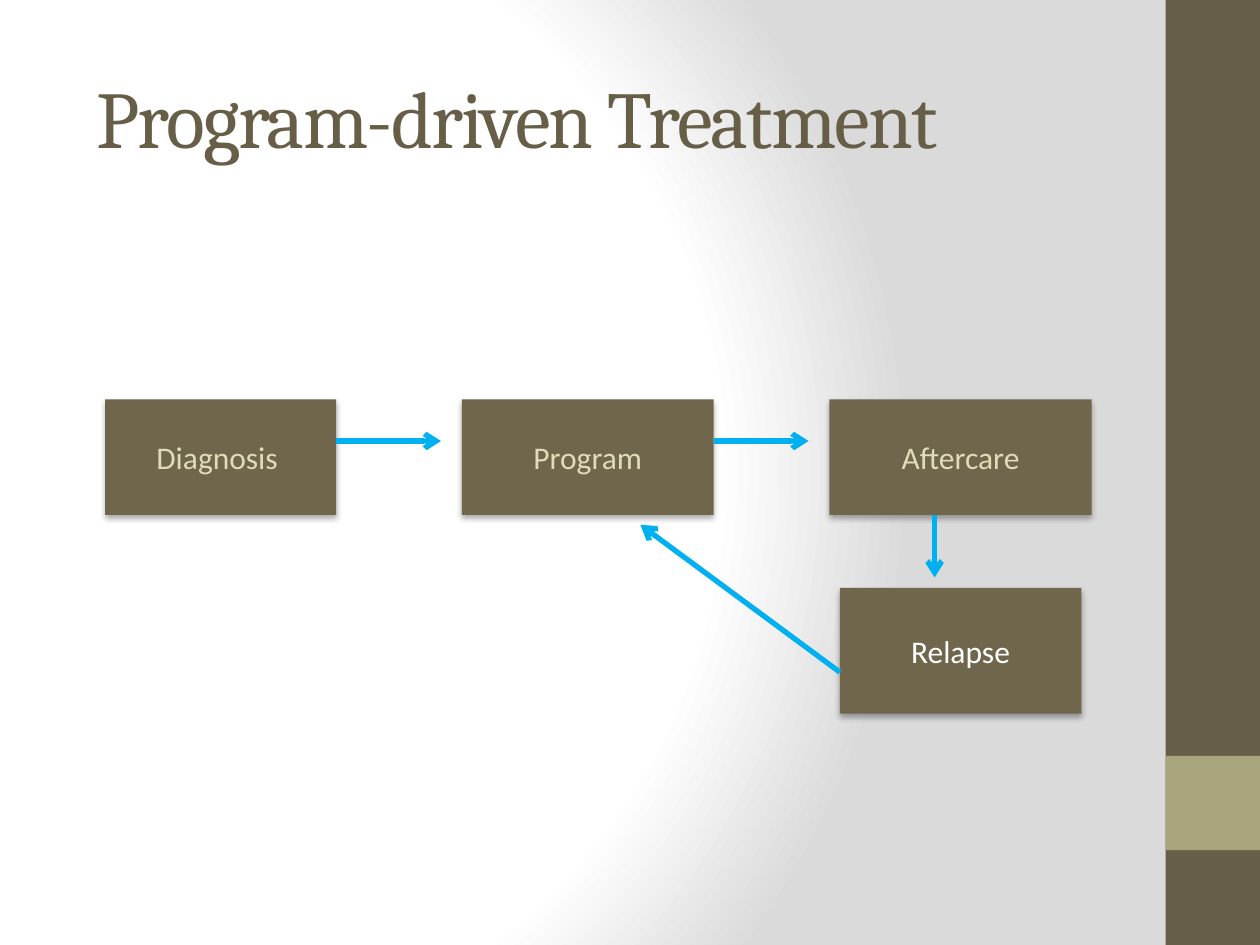
from dataclasses import dataclass

from lxml import etree
from pptx import Presentation
from pptx.dml.color import RGBColor
from pptx.enum.shapes import MSO_CONNECTOR, MSO_SHAPE
from pptx.enum.text import MSO_ANCHOR, PP_ALIGN
from pptx.oxml import parse_xml
from pptx.oxml.ns import nsdecls, qn
from pptx.shapes.autoshape import Shape
from pptx.slide import Slide
from pptx.util import Cm, Pt

RECTANGLE = MSO_SHAPE.RECTANGLE
STRAIGHT = MSO_CONNECTOR.STRAIGHT
CENTER = PP_ALIGN.CENTER
MIDDLE = MSO_ANCHOR.MIDDLE


@dataclass(frozen=True)
class Theme:
    band: str = "675E47"
    accent: str = "A9A57C"
    box: str = "6F664C"
    box_text: str = "DFDCB7"
    white: str = "FFFFFF"
    background_edge: str = "DADADA"
    arrow: str = "00B0F0"
    shadow: str = "000000"
    title_font: str = "Cambria"
    body_font: str = "Calibri"
    title_size: int = 46
    body_size: int = 18
    arrow_width: int = 3


THEME = Theme()


@dataclass(frozen=True)
class Area:
    """Left, top, width and height in centimetres."""
    left: float
    top: float
    width: float
    height: float

    def lengths(self) -> tuple[Cm, Cm, Cm, Cm]:
        return Cm(self.left), Cm(self.top), Cm(self.width), Cm(self.height)


@dataclass(frozen=True)
class Step:
    label: str
    area: Area
    color: str = THEME.box_text


@dataclass(frozen=True)
class Arrow:
    """Start and end points in centimetres."""
    start: tuple[float, float]
    end: tuple[float, float]


SLIDE_WIDTH, SLIDE_HEIGHT = 25.4, 19.05
BAND_LEFT, BAND_WIDTH = 23.5, 1.9
ROW_TOP, ROW_HEIGHT = 8.05, 2.33
ROW_BOTTOM = ROW_TOP + ROW_HEIGHT
ARROW_Y = 8.89

DIAGNOSIS = Step("Diagnosis ", Area(2.12, ROW_TOP, 4.66, ROW_HEIGHT))
PROGRAM = Step("Program", Area(9.31, ROW_TOP, 5.08, ROW_HEIGHT))
AFTERCARE = Step("Aftercare", Area(16.72, ROW_TOP, 5.29, ROW_HEIGHT))
RELAPSE = Step("Relapse", Area(16.93, 11.85, 4.87, 2.54), THEME.white)
STEPS = (DIAGNOSIS, PROGRAM, AFTERCARE, RELAPSE)

ARROWS = (
    Arrow((6.78, ARROW_Y), (8.89, ARROW_Y)),
    Arrow((14.39, ARROW_Y), (16.3, ARROW_Y)),
    Arrow((18.84, ROW_BOTTOM), (18.84, 11.64)),
    Arrow((RELAPSE.area.left, 13.55), (12.91, 10.58)),
)


def set_background(slide: Slide) -> None:
    """Fill the background with a circular gradient, white at its centre."""
    slide.background.fill.solid()
    properties = slide.element.find(".//" + qn("p:bgPr"))
    stops = ((0, THEME.white), (75, THEME.white), (100, THEME.background_edge))
    stop_xml = "".join(
        f'<a:gs pos="{position * 1000}"><a:srgbClr val="{color}"/></a:gs>'
        for position, color in stops
    )
    gradient = parse_xml(
        f'<a:gradFill {nsdecls("a")} rotWithShape="1"><a:gsLst>{stop_xml}</a:gsLst>'
        '<a:path path="circle"><a:fillToRect l="20000" t="50000" r="100000" b="50000"/>'
        "</a:path></a:gradFill>"
    )
    properties.replace(properties[0], gradient)


def add_rectangle(slide: Slide, area: Area, color: str) -> Shape:
    shape = slide.shapes.add_shape(RECTANGLE, *area.lengths())
    shape.fill.solid()
    shape.fill.fore_color.rgb = RGBColor.from_string(color)
    shape.line.fill.background()
    shape.shadow.inherit = False
    return shape


def write_text(shape: Shape, text: str, *, font: str, size: int, color: str,
               spacing: float = 0) -> None:
    """Write one centred line; spacing is the character spacing in points."""
    frame = shape.text_frame
    frame.word_wrap = True
    frame.vertical_anchor = MIDDLE
    paragraph = frame.paragraphs[0]
    paragraph.alignment = CENTER
    run = paragraph.add_run()
    run.text = text
    run.font.name = font
    run.font.size = Pt(size)
    run.font.color.rgb = RGBColor.from_string(color)
    if spacing:
        run.font._element.set("spc", str(round(spacing * 100)))


def add_soft_shadow(shape: Shape) -> None:
    effects = shape.element.spPr.find(qn("a:effectLst"))
    effects.append(parse_xml(
        f'<a:outerShdw {nsdecls("a")} blurRad="{Pt(3.5)}" dist="{Pt(2.2)}" '
        f'dir="5400000" rotWithShape="0"><a:srgbClr val="{THEME.shadow}">'
        '<a:alpha val="32000"/></a:srgbClr></a:outerShdw>'
    ))


def add_step(slide: Slide, step: Step) -> None:
    shape = add_rectangle(slide, step.area, THEME.box)
    add_soft_shadow(shape)
    write_text(shape, step.label, font=THEME.body_font, size=THEME.body_size,
               color=step.color)


def add_arrow(slide: Slide, arrow: Arrow) -> None:
    points = (Cm(value) for value in arrow.start + arrow.end)
    connector = slide.shapes.add_connector(STRAIGHT, *points)
    connector.line.color.rgb = RGBColor.from_string(THEME.arrow)
    connector.line.width = Pt(THEME.arrow_width)
    properties = connector.element.spPr
    etree.SubElement(properties.find(qn("a:ln")), qn("a:tailEnd"), type="arrow")
    etree.SubElement(properties, qn("a:effectLst"))


def main() -> None:
    presentation = Presentation()
    presentation.slide_width = Cm(SLIDE_WIDTH)
    presentation.slide_height = Cm(SLIDE_HEIGHT)
    slide = presentation.slides.add_slide(presentation.slide_layouts[6])
    set_background(slide)

    add_rectangle(slide, Area(BAND_LEFT, 0, BAND_WIDTH, SLIDE_HEIGHT), THEME.band)
    add_rectangle(slide, Area(BAND_LEFT, 15.24, BAND_WIDTH, BAND_WIDTH), THEME.accent)

    title = slide.shapes.add_textbox(*Area(0, 0.76, 21.17, 3.18).lengths())
    write_text(title, "Program-driven Treatment ", font=THEME.title_font,
               size=THEME.title_size, color=THEME.band, spacing=-1)

    for step in STEPS:
        add_step(slide, step)
    for arrow in ARROWS:
        add_arrow(slide, arrow)
    presentation.save("out.pptx")


if __name__ == "__main__":
    main()
